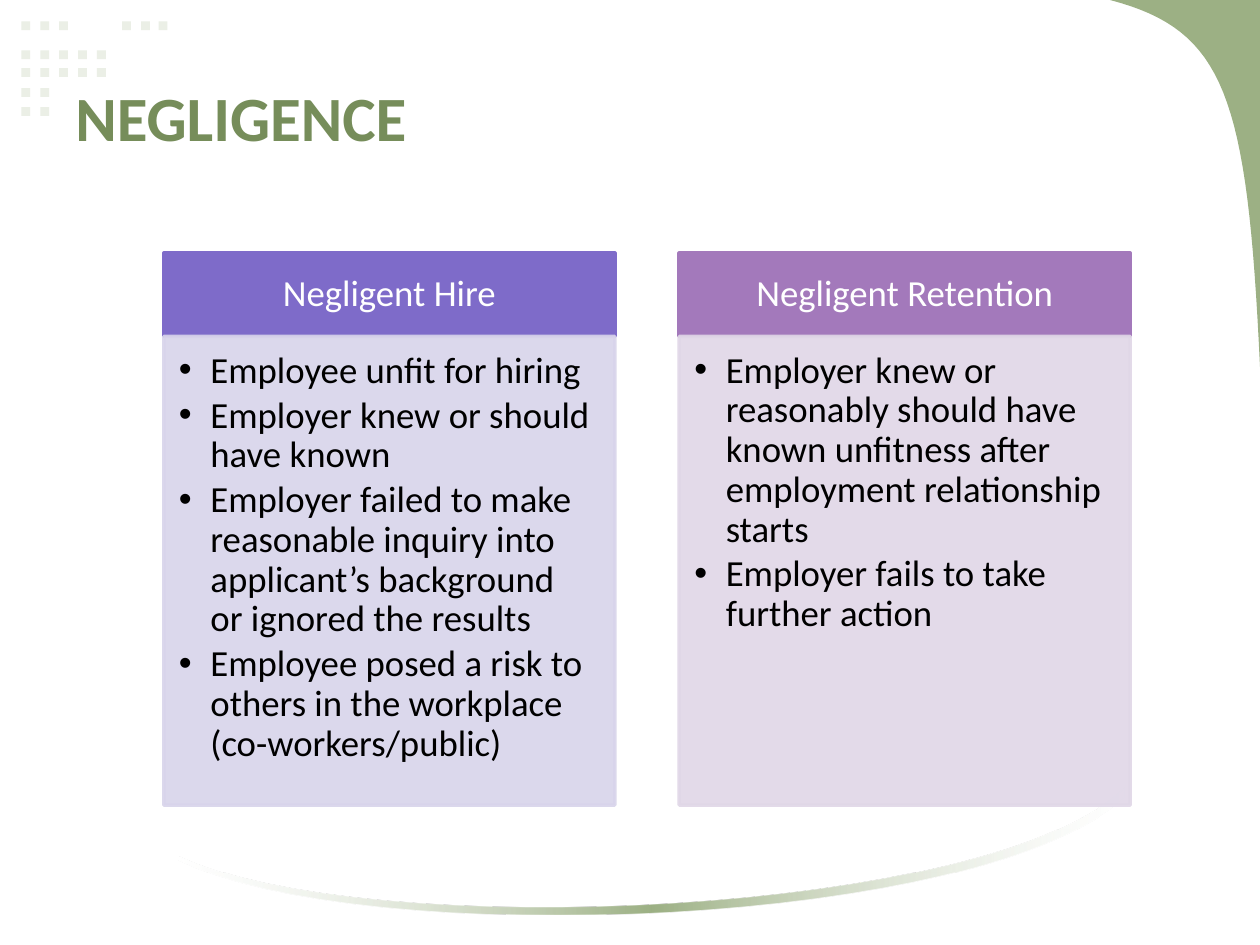
from lxml import etree
from pptx import Presentation, util as u
from pptx.dml.color import RGBColor
from pptx.enum import shapes, text
from pptx.oxml import ns, parse_xml

prs = Presentation()
prs.slide_width, prs.slide_height = u.Inches(10), u.Inches(7.5)
s = prs.slides.add_slide(prs.slide_layouts[6])
CELL = prs.slide_width / 100


def grid(*cells):
    return [u.Emu(round(n * CELL)) for n in cells]


def paint(fill, color, alpha=100):
    fill.solid()
    fill.fore_color.rgb = RGBColor.from_string(color)
    if alpha < 100:
        clr = fill._xPr.find(".//" + ns.qn("a:srgbClr"))
        etree.SubElement(clr, ns.qn("a:alpha")).set("val", str(alpha * 1000))


dot_rows = [
    (1.7, [1.7, 3.2, 4.7, 9.7, 11.2, 12.6]),
    (4, [1.7, 3.2, 4.7, 6.2, 7.7]),
    (5.4, [1.7, 3.2, 4.7, 6.2, 7.7]),
    (7, [1.7, 3.2]),
    (8.5, [1.7, 3.2]),
]
for y, xs in dot_rows:
    for x in xs:
        sp = s.shapes.add_shape(shapes.MSO_SHAPE.RECTANGLE, *grid(x, y, 0.7, 0.7))
        sp.shadow.inherit = False
        paint(sp.fill, "EBEFE6")
        sp.line.fill.background()

corner = [[(88.1, 0), (97.2, 2.4), (99, 7.5), (100, 29.1)],
          [(100, 29.1), (100, 20), (100, 10), (100, 0)]]
swoosh = [[(89.2, 63.2), (78.5, 73.6), (28.6, 75.4), (14.2, 68.2)],
          [(14.2, 67.9), (29, 74.8), (78.9, 72.7), (89.2, 62.5)]]
STEPS = 32
curved = []
for curves in (corner, swoosh):
    points = []
    for ends in curves:
        for i in range(STEPS + 1):
            t = i / STEPS
            weights = ((1 - t) ** 3, 3 * t * (1 - t) ** 2, 3 * t * t * (1 - t), t ** 3)
            points.append(grid(*(sum(w * pt[axis] for w, pt in zip(weights, ends))
                                 for axis in (0, 1))))
    fb = s.shapes.build_freeform(*points[0])
    fb.add_line_segments(points[1:], close=True)
    sp = fb.convert_to_shape()
    sp.shadow.inherit = False
    sp.line.fill.background()
    paint(sp.fill, "9CB084")
    curved.append(sp)

stops = "".join(
    f'<a:gs pos="{pos * 1000}"><a:srgbClr val="{color}"><a:alpha val="{alpha * 1000}"/></a:srgbClr></a:gs>'
    for pos, color, alpha in [(0, "FFFFFF", 30), (50, "9CB084", 100), (100, "FFFFFF", 30)])
solid = curved[1]._element.spPr.find(ns.qn("a:solidFill"))
solid.getparent().replace(solid, parse_xml(
    f'<a:gradFill {ns.nsdecls("a")}><a:gsLst>{stops}</a:gsLst><a:lin ang="0" scaled="0"/></a:gradFill>'))

title = s.shapes.add_textbox(*grid(5, 3, 90, 12.5))
tf = title.text_frame
tf.word_wrap = True
tf.vertical_anchor = text.MSO_ANCHOR.MIDDLE
r = tf.paragraphs[0].add_run()
r.text = "NEGLIGENCE"
r.font.name, r.font.size, r.font.bold = "Calibri", u.Pt(36), True
paint(r.font.fill, "768D5A")

cards = [
    ("Negligent Hire", "7E6BC9", "D8D4EB", [
        "Employee unfit for hiring",
        "Employer knew or should have known",
        "Employer failed to make reasonable inquiry into applicant’s background or ignored the results",
        "Employee posed a risk to others in the workplace (co-workers/public)"]),
    ("Negligent Retention", "A379BB", "E0D7E7", [
        "Employer knew or reasonably should have known unfitness after employment relationship starts",
        "Employer fails to take further action"]),
]
LEFT, TOP, WIDTH, PITCH = 13, 20.1, 35.8, 40.9
HEAD, BODY = 6.6, 37.2
for col, (heading, dark, pale, items) in enumerate(cards):
    x = LEFT + col * PITCH
    parts = [(TOP, HEAD, dark, 100, [heading], "FFFFFF", (1.6, 0.9, 1.6, 0.9)),
             (TOP + HEAD, BODY, pale, 90, items, "000000", (1.2, 1.2, 1.6, 1.8))]
    for y, height, color, alpha, lines, ink, insets in parts:
        is_head = lines == [heading]
        sp = s.shapes.add_shape(shapes.MSO_SHAPE.RECTANGLE, *grid(x, y, WIDTH, height))
        sp.shadow.inherit = False
        paint(sp.fill, color, alpha)
        paint(sp.line.fill, color, alpha)
        sp.line.width = u.Pt(2)
        tf = sp.text_frame
        tf.word_wrap = True
        tf.margin_left, tf.margin_top, tf.margin_right, tf.margin_bottom = grid(*insets)
        tf.vertical_anchor = text.MSO_ANCHOR.MIDDLE if is_head else text.MSO_ANCHOR.TOP
        for i, line in enumerate(lines):
            p = tf.add_paragraph() if i else tf.paragraphs[0]
            p.line_spacing = 0.9
            p.alignment = text.PP_ALIGN.CENTER if is_head else text.PP_ALIGN.LEFT
            if not is_head:
                p.space_after = u.Pt(3)
                pPr = p._p.get_or_add_pPr()
                indent = grid(2.5)[0]
                pPr.set("marL", str(indent))
                pPr.set("indent", str(-indent))
                etree.SubElement(pPr, ns.qn("a:buFont")).set("typeface", "Arial")
                etree.SubElement(pPr, ns.qn("a:buChar")).set("char", "•")
            r = p.add_run()
            r.text = line
            r.font.name, r.font.size = "Calibri", u.Pt(21)
            paint(r.font.fill, ink)

prs.save("out.pptx")
